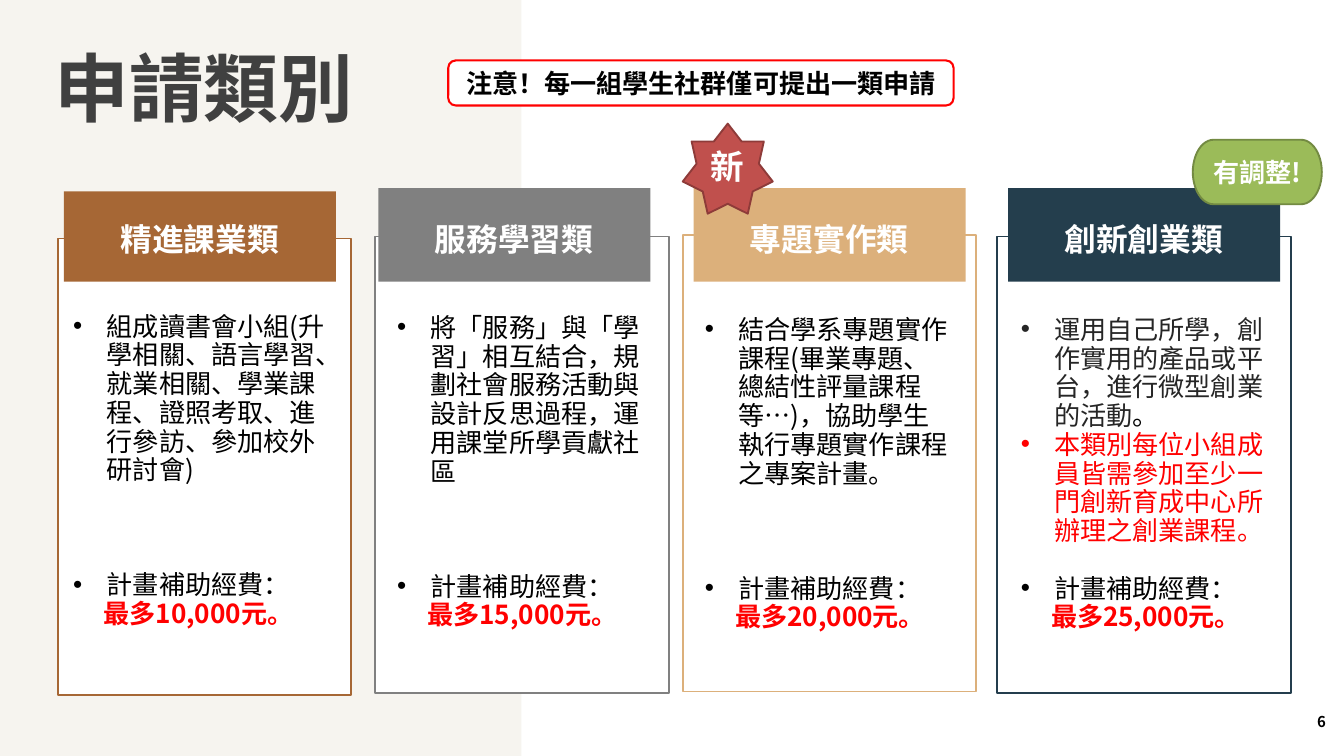
from lxml.etree import SubElement
from pptx import Presentation
from pptx.dml.color import RGBColor
from pptx.enum.shapes import MSO_SHAPE
from pptx.enum.text import MSO_ANCHOR, MSO_AUTO_SIZE, PP_ALIGN
from pptx.oxml.ns import qn
from pptx.util import Inches, Pt

FONT = "Noto Sans CJK SC"
COLORS = {
    "panel": "F6F4EF", "white": "FFFFFF", "black": "000000", "title": "404040",
    "dark": "262626", "red": "FF0000", "brown": "A66735", "gray": "808080",
    "sand": "DCB07B", "navy": "243E4D", "star": "C0504D", "star_line": "8E3B39",
    "green": "9BBB59", "green_line": "738A42",
}
BODY_SIZE = 28
BODY_LINE = 30.8
CARD_SIZE = (4.37, 6.79)

# color, heading, frame (left, top), header (left, top), body (left, top, width),
# bullets as lists of (text, color), empty lines before the grant, grant
CARDS = [
    ("brown", "精進課業類", (0.86, 3.55), (0.95, 2.85), (1.09, 4.65, 3.76),
     [[("組成讀書會小組(升學相關、語言學習、就業相關、學業課程、證照考取、進行參訪、參加校外研討會)", "black")]],
     3, "最多10,000元。"),
    ("gray", "服務學習類", (5.58, 3.52), (5.63, 2.8), (5.91, 4.67, 3.68),
     [[("將「服務」與「學習」相互結合，規劃社會服務活動與設計反思過程，運用課堂所學貢獻社區", "black")]],
     3, "最多15,000元。"),
    ("sand", "專題實作類", (10.16, 3.5), (10.32, 2.8), (10.49, 4.7, 3.68),
     [[("結合學系專題實作課程(畢業專題、總結性評量課程等…)，協助學生執行專題實作課程之專案計畫。", "black")]],
     3, "最多20,000元。"),
    ("navy", "創新創業類", (14.84, 3.52), (15, 2.8), (15.19, 4.7, 3.68),
     [[("運用自己所學，創作實用的產品或平台，進行微型創業的活動", "dark"), ("。", "black")],
      [("本類別每位小組成員皆需參加至少一門創新育成中心所辦理之創業課程。", "red")]],
     1, "最多25,000元。"),
]


def rgb(name):
    return RGBColor.from_string(COLORS[name])


def add_span(para, text, size, color, bold=False):
    span = para.add_run()
    span.text = text
    span.font.name = FONT
    span.font.size = Pt(size)
    span.font.bold = bold
    span.font.color.rgb = rgb(color)
    east_asian = SubElement(span.font._element, qn("a:ea"))
    east_asian.set("typeface", FONT)


def add_box(page, kind, left, top, width, height, fill, line=None, line_width=2):
    box = page.shapes.add_shape(
        kind, Inches(left), Inches(top), Inches(width), Inches(height))
    box.shadow.inherit = False
    box.fill.solid()
    box.fill.fore_color.rgb = rgb(fill)
    if line:
        box.line.color.rgb = rgb(line)
        box.line.width = Pt(line_width)
    else:
        box.line.fill.background()
    return box


def add_label(box, text, size, color):
    """Write one bold centred line inside a shape."""
    frame = box.text_frame
    frame.vertical_anchor = MSO_ANCHOR.MIDDLE
    para = frame.paragraphs[0]
    para.alignment = PP_ALIGN.CENTER
    add_span(para, text, size, color, bold=True)


def clear_margins(frame):
    frame.margin_left = frame.margin_right = 0
    frame.margin_top = frame.margin_bottom = 0


def add_text_frame(page, left, top, width, height):
    box = page.shapes.add_textbox(
        Inches(left), Inches(top), Inches(width), Inches(height))
    frame = box.text_frame
    frame.word_wrap = True
    clear_margins(frame)
    return frame


def set_indent(para, left, first=0, bullet=False):
    properties = para._p.get_or_add_pPr()
    properties.set("marL", str(Inches(left)))
    properties.set("indent", str(Inches(first)))
    if bullet:
        SubElement(properties, qn("a:buFont")).set("typeface", "Arial")
        SubElement(properties, qn("a:buChar")).set("char", "•")


def add_body(page, place, bullets, empty_lines, grant):
    left, top, width = place
    frame = add_text_frame(page, left, top, width, 5.22)
    para = frame.paragraphs[0]
    for spans in bullets + [[("計畫補助經費：", "black")]]:
        para.line_spacing = Pt(BODY_LINE)
        set_indent(para, 0.5, -0.5, bullet=True)
        for text, color in spans:
            add_span(para, text, BODY_SIZE, color)
        last_bullet, para = para, frame.add_paragraph()
    last_bullet.space_before = Pt(BODY_LINE * empty_lines)
    para.line_spacing = Pt(BODY_LINE)
    set_indent(para, 0.45)
    add_span(para, grant, BODY_SIZE, "red", bold=True)


def add_card(page, color, heading, frame_at, header_at, body_at, bullets, empty_lines, grant):
    add_box(page, MSO_SHAPE.RECTANGLE, *frame_at, *CARD_SIZE, "white", color)
    left, top = header_at
    add_box(page, MSO_SHAPE.RECTANGLE, left, top, 4.05, 4.19 - top, color)
    para = add_text_frame(page, left + 0.17, 3.18, 3.7, 0.63).paragraphs[0]
    para.alignment = PP_ALIGN.CENTER
    para.line_spacing = Pt(47.6)
    add_span(para, heading, 34, "white", bold=True)
    add_body(page, body_at, bullets, empty_lines, grant)


def fill_title(page, text):
    title = page.shapes.title
    title.left, title.top = Inches(0.81), Inches(0.63)
    title.width, title.height = Inches(7.14), Inches(1.35)
    frame = title.text_frame
    frame.auto_size = MSO_AUTO_SIZE.NONE
    frame.vertical_anchor = MSO_ANCHOR.TOP
    clear_margins(frame)
    para = frame.paragraphs[0]
    para.alignment = PP_ALIGN.LEFT
    add_span(para, text, 80, "title", bold=True)


def add_page_number(page, number):
    frame = add_text_frame(page, 17.5, 10.54, 2.23, 0.4)
    frame.vertical_anchor = MSO_ANCHOR.MIDDLE
    para = frame.paragraphs[0]
    para.alignment = PP_ALIGN.RIGHT
    add_span(para, number, 16, "black", bold=True)


def main():
    deck = Presentation()
    deck.slide_width, deck.slide_height = Inches(20), Inches(11.25)
    page = deck.slides.add_slide(deck.slide_layouts[5])

    panel = add_box(page, MSO_SHAPE.RECTANGLE, 0, 0, 7.76, 11.25, "panel")
    page.shapes.title.element.addprevious(panel.element)
    fill_title(page, "申請類別")
    for card in CARDS:
        add_card(page, *card)

    star = add_box(page, MSO_SHAPE.STAR_7_POINT, 10.16, 1.84, 1.34, 1.34, "star", "star_line")
    add_label(star, "新", 36, "white")
    badge = add_box(page, MSO_SHAPE.FLOWCHART_TERMINATOR, 17.75, 2.08, 1.92, 0.96,
                    "green", "green_line")
    add_label(badge, "有調整!", 28, "white")
    notice = add_box(page, MSO_SHAPE.ROUNDED_RECTANGLE, 6.67, 0.9, 7.52, 0.67,
                     "white", "red", 2.25)
    add_label(notice, "注意！每一組學生社群僅可提出一類申請", 28, "black")
    add_page_number(page, "6")
    deck.save("out.pptx")


if __name__ == "__main__":
    main()
